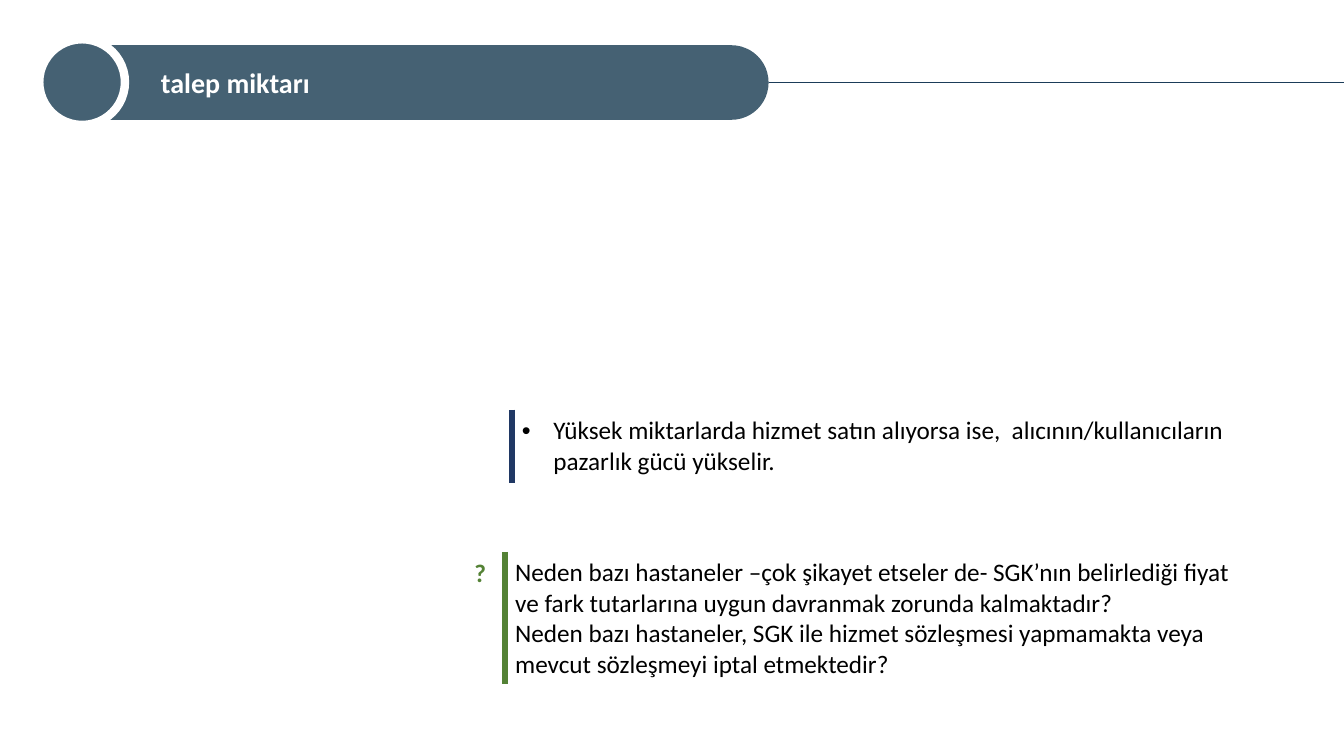
from dataclasses import dataclass

from lxml.etree import SubElement
from pptx import Presentation
from pptx.dml.color import RGBColor
from pptx.enum.shapes import MSO_CONNECTOR as Connector, MSO_SHAPE as Shape
from pptx.enum.text import MSO_ANCHOR as Anchor, PP_ALIGN as Align
from pptx.oxml import parse_xml
from pptx.oxml.ns import nsdecls, qn
from pptx.util import Cm, Pt


@dataclass(frozen=True)
class Theme:
    font: str = "Calibri"
    title_size: int = 20
    body_size: int = 18
    slate: str = "456173"
    line: str = "1B3C59"
    navy: str = "203864"
    green: str = "548235"
    white: str = "FFFFFF"
    black: str = "000000"


theme = Theme()


def style_text(frame, size, color, bold=False):
    for para in frame.paragraphs:
        for span in para.runs:
            span.font.name = theme.font
            span.font.size = Pt(size)
            span.font.bold = bold
            span.font.color.rgb = RGBColor.from_string(color)


def add_barred_text(left, top, width, height, bar_color, text):
    """Add a one-cell table with a thick coloured left border."""
    table = page.shapes.add_table(
        1, 1, Cm(left), Cm(top), Cm(width), Cm(height)).table
    table.first_row = table.horz_banding = False
    cell = table.cell(0, 0)
    cell.fill.solid()
    cell.fill.fore_color.rgb = RGBColor.from_string(theme.white)
    cell._tc.get_or_add_tcPr().insert(0, parse_xml(
        f'<a:lnL {nsdecls("a")} w="{Pt(4.5)}"><a:solidFill>'
        f'<a:srgbClr val="{bar_color}"/></a:solidFill></a:lnL>'))
    cell.text_frame.text = text
    style_text(cell.text_frame, theme.body_size, theme.black)
    return cell


deck = Presentation()
deck.slide_width, deck.slide_height = Cm(33.87), Cm(19.05)
page = deck.slides.add_slide(deck.slide_layouts[6])

# Title bar with its circle
title_bar = page.shapes.add_shape(
    Shape.ROUNDED_RECTANGLE, Cm(0.99), Cm(1.14), Cm(18.38), Cm(1.88))
title_bar.adjustments[0] = 0.5
title_bar.line.fill.background()
title_frame = title_bar.text_frame
title_frame.text = "talep miktarı"
title_frame.margin_left = Cm(2.79)
title_frame.vertical_anchor = Anchor.MIDDLE
title_frame.paragraphs[0].alignment = Align.LEFT
style_text(title_frame, theme.title_size, theme.white, bold=True)

circle = page.shapes.add_shape(
    Shape.OVAL, Cm(0.99), Cm(0.99), Cm(2.16), Cm(2.16))
circle.line.color.rgb = RGBColor.from_string(theme.white)
circle.line.width = Pt(6)

for shape in (title_bar, circle):
    shape.shadow.inherit = False
    shape.fill.solid()
    shape.fill.fore_color.rgb = RGBColor.from_string(theme.slate)

title_line = page.shapes.add_connector(
    Connector.STRAIGHT, Cm(19.37), Cm(2.08), deck.slide_width, Cm(2.08))
title_line.begin_connect(title_bar, 3)
title_line.line.color.rgb = RGBColor.from_string(theme.line)
title_line.line.width = Pt(0.5)
SubElement(title_line._element.spPr, qn("a:effectLst"))

# Statement
statement = add_barred_text(
    12.9, 10.34, 18.82, 1.78, theme.navy,
    "Yüksek miktarlarda hizmet satın alıyorsa ise,  "
    "alıcının/kullanıcıların pazarlık gücü yükselir.")
bullet = statement.text_frame.paragraphs[0]._p.get_or_add_pPr()
bullet.set("marL", str(Cm(0.79)))
bullet.set("indent", str(-Cm(0.79)))
SubElement(bullet, qn("a:buFont")).set("typeface", "Arial")
SubElement(bullet, qn("a:buChar")).set("char", "•")

# Questions
question_mark = page.shapes.add_textbox(
    Cm(10.95), Cm(13.92), Cm(1.55), Cm(1.02))
mark_frame = question_mark.text_frame
mark_frame.word_wrap = True
mark_frame.text = "?"
mark_frame.paragraphs[0].alignment = Align.RIGHT
style_text(mark_frame, theme.body_size, theme.green, bold=True)

add_barred_text(
    12.73, 13.92, 19.15, 3.3, theme.green,
    "Neden bazı hastaneler –çok şikayet etseler de- SGK’nın belirlediği "
    "fiyat ve fark tutarlarına uygun davranmak zorunda kalmaktadır?\n"
    "Neden bazı hastaneler, SGK ile hizmet sözleşmesi yapmamakta veya "
    "mevcut sözleşmeyi iptal etmektedir?")

deck.save("out.pptx")
